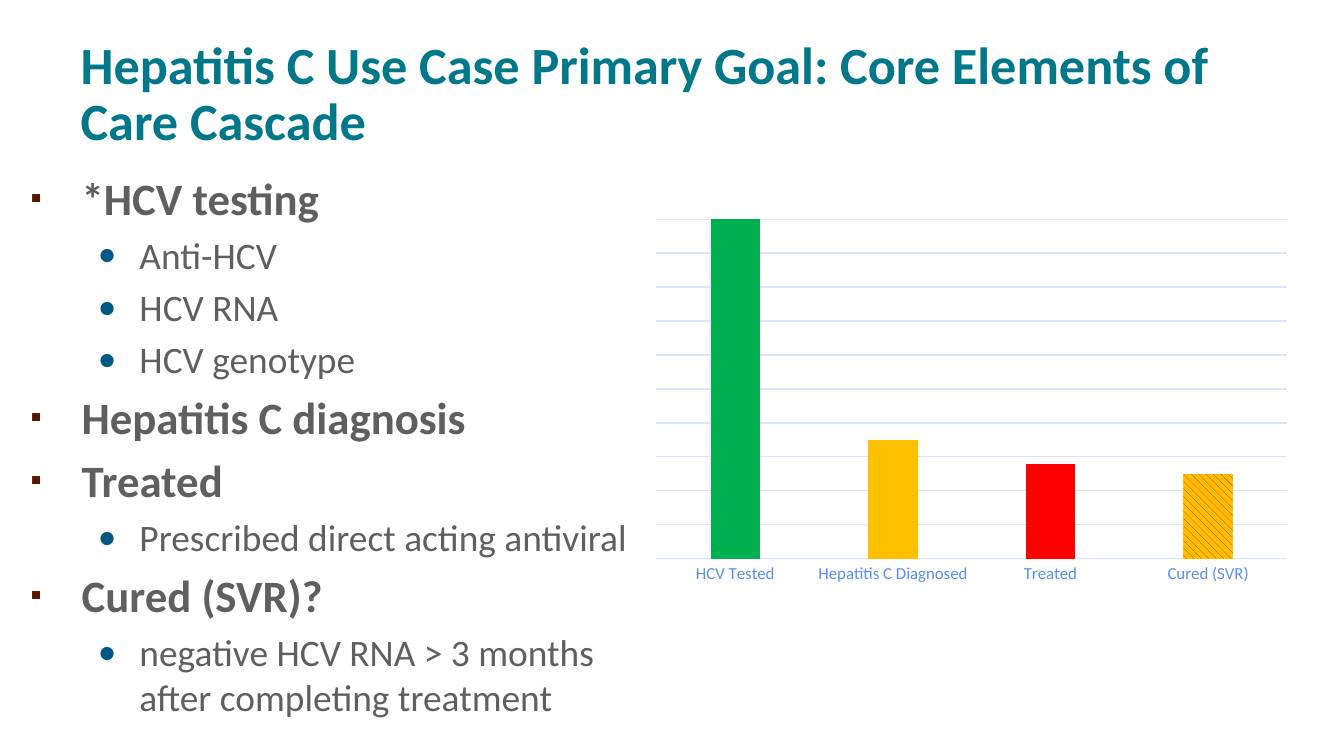
import pptx
import pptx.chart.data
import pptx.dml.color
import pptx.enum.chart
import pptx.enum.dml
import pptx.enum.text
import pptx.oxml
import pptx.oxml.ns
import pptx.util
from lxml import etree

Inches = pptx.util.Inches
Pt = pptx.util.Pt
RGBColor = pptx.dml.color.RGBColor

FONT = "Calibri"
TEAL = RGBColor(0x00, 0x78, 0x8A)
GRAY = RGBColor(0x5F, 0x5F, 0x5F)
BROWN = RGBColor(0x54, 0x19, 0x00)
NAVY = RGBColor(0x00, 0x59, 0x84)
BLUE = RGBColor(0x0F, 0x56, 0xDC)
SKY = RGBColor(0x58, 0x8E, 0xF4)
PALE = RGBColor(0xD8, 0xE5, 0xFC)
GREEN = RGBColor(0x00, 0xB0, 0x50)
GOLD = RGBColor(0xFF, 0xC0, 0x00)
RED = RGBColor(0xFF, 0x00, 0x00)

GOALS = [
    ("*HCV testing", ["Anti-HCV", "HCV RNA", "HCV genotype"]),
    ("Hepatitis C diagnosis", []),
    ("Treated", ["Prescribed direct acting antiviral"]),
    ("Cured (SVR)?", ["negative HCV RNA > 3 months after completing treatment"]),
]
RATES = {"HCV Tested": 100, "Hepatitis C Diagnosed": 35, "Treated": 28, "Cured (SVR)": 25}
PLOT = {"x": 0.061, "y": 0.074, "w": 0.939, "h": 0.842}


def style(font, size, color, bold=False):
    """Set the face, size and colour of a font."""
    font.name = FONT
    font.size = Pt(size)
    font.bold = bold
    font.color.rgb = color


def write(para, text, size=20, color=GRAY, bold=False, before=0):
    """Put one formatted run in a paragraph."""
    para.alignment = pptx.enum.text.PP_ALIGN.LEFT
    para.space_before = Pt(before)
    run = para.add_run()
    run.text = text
    style(run.font, size, color, bold)


def add_mark(para, char, color, left, hang, scale=100):
    """Give a paragraph a hanging bullet."""
    props = para._p.get_or_add_pPr()
    props.set("marL", str(Inches(left)))
    props.set("indent", str(-Inches(hang)))
    qn = pptx.oxml.ns.qn
    tint = etree.SubElement(props, qn("a:buClr"))
    etree.SubElement(tint, qn("a:srgbClr")).set("val", str(color))
    etree.SubElement(props, qn("a:buSzPct")).set("val", str(scale * 1000))
    etree.SubElement(props, qn("a:buFont")).set("typeface", FONT)
    etree.SubElement(props, qn("a:buChar")).set("char", char)


def add_title(slide, text):
    """Place and fill the title."""
    title = slide.shapes.title
    title.left, title.top = Inches(0.5), Inches(0.23)
    title.width, title.height = Inches(9), Inches(0.94)
    frame = title.text_frame
    frame.auto_size = pptx.enum.text.MSO_AUTO_SIZE.NONE
    frame.vertical_anchor = pptx.enum.text.MSO_ANCHOR.BOTTOM
    para = frame.paragraphs[0]
    para.line_spacing = Pt(30)
    write(para, text, size=28, color=TEAL, bold=True)


def add_goals(slide):
    """Add the two-level list of goals."""
    box = slide.shapes.add_textbox(Inches(0.13), Inches(1.22), Inches(4.87), Inches(3.44))
    frame = box.text_frame
    frame.word_wrap = True
    para = frame.paragraphs[0]
    for goal, steps in GOALS:
        if para is None:
            para = frame.add_paragraph()
        write(para, goal, size=24, bold=True, before=4.8)
        add_mark(para, "▪", BROWN, 0.38, 0.38, scale=70)
        for step in steps:
            para = frame.add_paragraph()
            para.level = 1
            write(para, step, before=4)
            add_mark(para, "•", NAVY, 0.81, 0.31)
        para = None


def set_plot(chart):
    """Fix the inner plot area of a chart."""
    area = chart._chartSpace.chart.plotArea
    for old in area.findall(pptx.oxml.ns.qn("c:layout")):
        area.remove(old)
    parts = [("layoutTarget", "inner"), ("xMode", "edge"), ("yMode", "edge"), *PLOT.items()]
    tags = "".join(f'<c:{name} val="{val}"/>' for name, val in parts)
    space = pptx.oxml.ns.nsdecls("c")
    xml = f"<c:layout {space}><c:manualLayout>{tags}</c:manualLayout></c:layout>"
    area.insert(0, pptx.oxml.parse_xml(xml))


def set_axes(chart):
    """Format the axes and the grid."""
    none = pptx.enum.chart.XL_TICK_MARK.NONE
    base = chart.category_axis
    base.major_tick_mark = base.minor_tick_mark = none
    style(base.tick_labels.font, 9, SKY)
    side = chart.value_axis
    side.maximum_scale = 100
    side.major_unit = 10
    side.has_major_gridlines = True
    side.visible = False
    for line in (base.format.line, side.major_gridlines.format.line):
        line.color.rgb = PALE
        line.width = Pt(0.75)


def paint(fill, color):
    """Fill with one solid colour."""
    fill.solid()
    fill.fore_color.rgb = color


def add_chart(slide):
    """Add the care cascade column chart."""
    data = pptx.chart.data.CategoryChartData()
    data.categories = list(RATES)
    data.add_series("Series 1", list(RATES.values()))
    kind = pptx.enum.chart.XL_CHART_TYPE.COLUMN_CLUSTERED
    frame = slide.shapes.add_chart(kind, Inches(4.58), Inches(1.41), Inches(5), Inches(3), data)
    chart = frame.chart
    chart.has_title = chart.has_legend = False
    style(chart.font, 10, BLUE)
    set_plot(chart)
    set_axes(chart)
    plot = chart.plots[0]
    plot.vary_by_categories = False
    plot.gap_width, plot.overlap = 219, -27
    series = plot.series[0]
    paint(series.format.fill, GREEN)
    for index, color in ((1, GOLD), (2, RED)):
        paint(series.points[index].format.fill, color)
    fill = series.points[3].format.fill
    fill.patterned()
    fill.pattern = pptx.enum.dml.MSO_PATTERN.WIDE_DOWNWARD_DIAGONAL
    fill.fore_color.rgb = RED
    fill.back_color.rgb = GOLD


def main():
    """Build and save the slide."""
    deck = pptx.Presentation()
    deck.slide_width = Inches(10)
    deck.slide_height = Inches(10 * 9 / 16)
    slide = deck.slides.add_slide(deck.slide_layouts[5])
    add_title(slide, "Hepatitis C Use Case Primary Goal: Core Elements of Care Cascade")
    add_goals(slide)
    add_chart(slide)
    deck.save("out.pptx")


if __name__ == "__main__":
    main()
